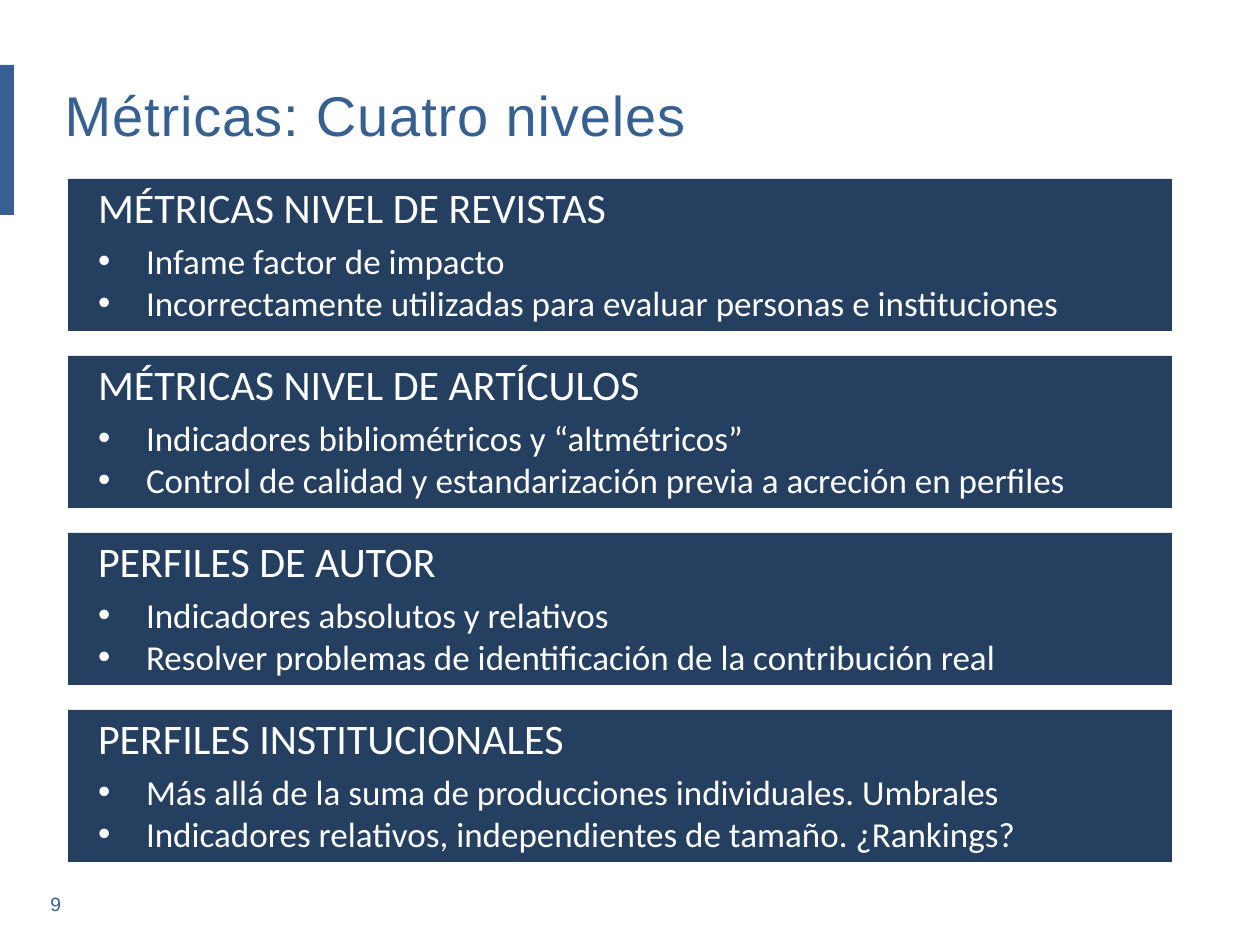
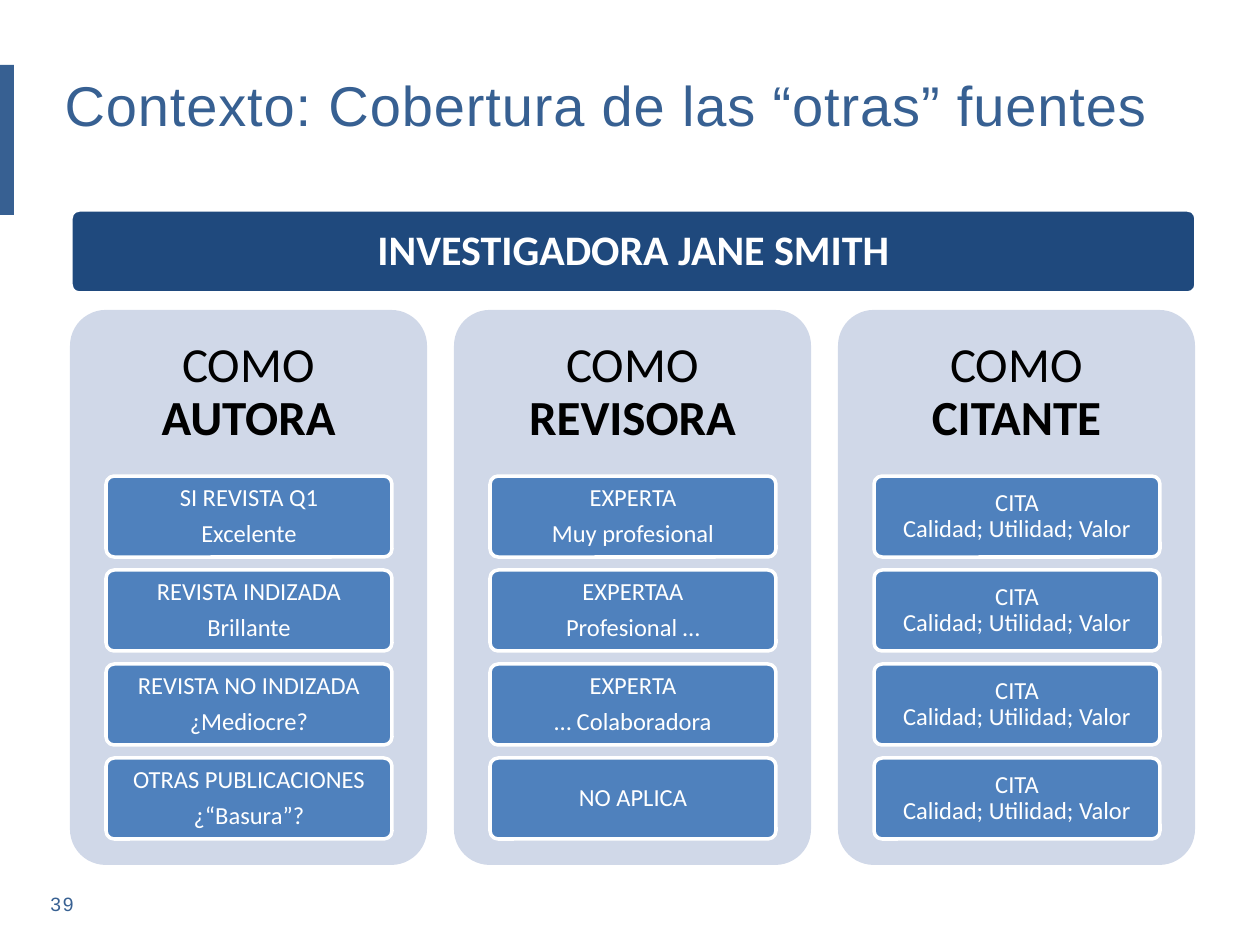
from pptx import Presentation
from pptx.dml.color import RGBColor
from pptx.enum.shapes import MSO_SHAPE
from pptx.enum.text import MSO_ANCHOR, MSO_AUTO_SIZE, PP_ALIGN
from pptx.util import Pt
from lxml import etree

RECT, ROUNDED = MSO_SHAPE.RECTANGLE, MSO_SHAPE.ROUNDED_RECTANGLE
TOP, MIDDLE = MSO_ANCHOR.TOP, MSO_ANCHOR.MIDDLE
LEFT, CENTER = PP_ALIGN.LEFT, PP_ALIGN.CENTER
NO_AUTOFIT = MSO_AUTO_SIZE.NONE
DRAWING = "{http://schemas.openxmlformats.org/drawingml/2006/main}"

PX = 914400 / 126
ACCENT, NAVY, BANNER = "376092", "253F61", "1F497D"
PANEL, CELL, WHITE, BLACK = "D0D8E8", "4F81BD", "FFFFFF", "000000"


def add_box(page, preset, place, fill, line=None):
    box = page.shapes.add_shape(preset, *[round(n * PX) for n in place])
    box.shadow.inherit = False
    box.fill.solid()
    box.fill.fore_color.rgb = RGBColor.from_string(fill)
    if line:
        box.line.color.rgb = RGBColor.from_string(line)
        box.line.width = Pt(2)
    else:
        box.line.fill.background()
    if preset == ROUNDED:
        box.adjustments[0] = 0.1
    return box


def style(para, size, color, font="Calibri", align=CENTER, bold=False, spacing=None):
    para.alignment = align
    para.font.name = font
    para.font.size = Pt(size)
    para.font.bold = bold
    para.font.color.rgb = RGBColor.from_string(color)
    if spacing:
        for span in para.runs:
            span._r.get_or_add_rPr().set("spc", str(spacing))


deck = Presentation()
deck.slide_width, deck.slide_height = round(1260 * PX), round(945 * PX)

# Shared frame: accent bar, title and page number
pages = []
for title, title_top, number in [
    ("Métricas: Cuatro niveles", 74, "9"),
    ("Contexto: Cobertura de las “otras” fuentes", 64, "39"),
]:
    page = deck.slides.add_slide(deck.slide_layouts[5])
    pages.append(page)
    add_box(page, RECT, (0, 65, 14, 150), ACCENT)

    heading = page.shapes.title
    heading.left, heading.top = round(52 * PX), round(title_top * PX)
    heading.width, heading.height = round(1154 * PX), round(81 * PX)
    frame = heading.text_frame
    frame.text = title
    frame.auto_size = NO_AUTOFIT
    frame.vertical_anchor = TOP
    style(frame.paragraphs[0], 32, ACCENT, "Arial", LEFT, spacing=50)

    footer = page.shapes.add_textbox(*[round(n * PX) for n in (38, 886, 1166, 37)])
    footer.text_frame.word_wrap = True
    footer.text_frame.text = number
    style(footer.text_frame.paragraphs[0], 11, ACCENT, "Arial", LEFT, spacing=100)

levels_page, context_page = pages

# Four levels of metrics
levels = [
    ("MÉTRICAS NIVEL DE REVISTAS",
     "Infame factor de impacto",
     "Incorrectamente utilizadas para evaluar personas e instituciones"),
    ("MÉTRICAS NIVEL DE ARTÍCULOS",
     "Indicadores bibliométricos y “altmétricos”",
     "Control de calidad y estandarización previa a acreción en perfiles"),
    ("PERFILES DE AUTOR",
     "Indicadores absolutos y relativos",
     "Resolver problemas de identificación de la contribución real"),
    ("PERFILES INSTITUCIONALES",
     "Más allá de la suma de producciones individuales. Umbrales",
     "Indicadores relativos, independientes de tamaño. ¿Rankings?"),
]
for row, lines in enumerate(levels):
    card = add_box(levels_page, RECT, (68, 179 + 177 * row, 1104, 152), NAVY)
    frame = card.text_frame
    frame.vertical_anchor = TOP
    frame.margin_left, frame.margin_top = round(30 * PX), round(3 * PX)
    frame.text = "\n".join(lines)
    name, *points = frame.paragraphs
    name.space_after = Pt(4)
    style(name, 24, WHITE, align=LEFT)
    for point in points:
        props = point._p.get_or_add_pPr()
        props.set("marL", str(round(48 * PX)))
        props.set("indent", str(-round(48 * PX)))
        etree.SubElement(props, DRAWING + "buFont", typeface="Arial")
        etree.SubElement(props, DRAWING + "buChar", char="•")
        style(point, 20, WHITE, align=LEFT)

# Roles of the researcher, one panel each
citation = "CITA\vCalidad; Utilidad; Valor"
roles = [
    ("AUTORA", ["SI REVISTA Q1\nExcelente", "REVISTA INDIZADA\nBrillante",
                "REVISTA NO INDIZADA\n¿Mediocre?", "OTRAS PUBLICACIONES\n¿“Basura”?"]),
    ("REVISORA", ["EXPERTA\nMuy profesional", "EXPERTAA\nProfesional …",
                  "EXPERTA\n… Colaboradora", "NO APLICA"]),
    ("CITANTE", [citation] * 4),
]
for column, (role, cells) in enumerate(roles):
    left = 70 + 384 * column
    panel = add_box(context_page, ROUNDED, (left, 310, 357, 555), PANEL)
    frame = panel.text_frame
    frame.vertical_anchor = MIDDLE
    frame.margin_top, frame.margin_bottom = round(15 * PX), round(404 * PX)
    para = frame.paragraphs[0]
    para.add_run().text = "COMO"
    para.add_line_break()
    span = para.add_run()
    span.text = role
    span.font.bold = True
    para.line_spacing = 0.9
    style(para, 28, BLACK)

    for row, text in enumerate(cells):
        cell = add_box(context_page, ROUNDED, (left + 36, 476 + 94 * row, 286, 81), CELL, WHITE)
        frame = cell.text_frame
        frame.margin_top = frame.margin_bottom = round(6 * PX)
        frame.text = text
        for para in frame.paragraphs:
            para.line_spacing = 0.9
            style(para, 14, WHITE)
        for para in frame.paragraphs[:-1]:
            para.space_after = Pt(5)

# Banner with the researcher's name
banner = add_box(context_page, ROUNDED, (71, 210, 1125, 83), BANNER, WHITE)
banner.text_frame.text = "INVESTIGADORA JANE SMITH"
banner.text_frame.paragraphs[0].line_spacing = 0.9
style(banner.text_frame.paragraphs[0], 24, WHITE, bold=True)

deck.save("out.pptx")
